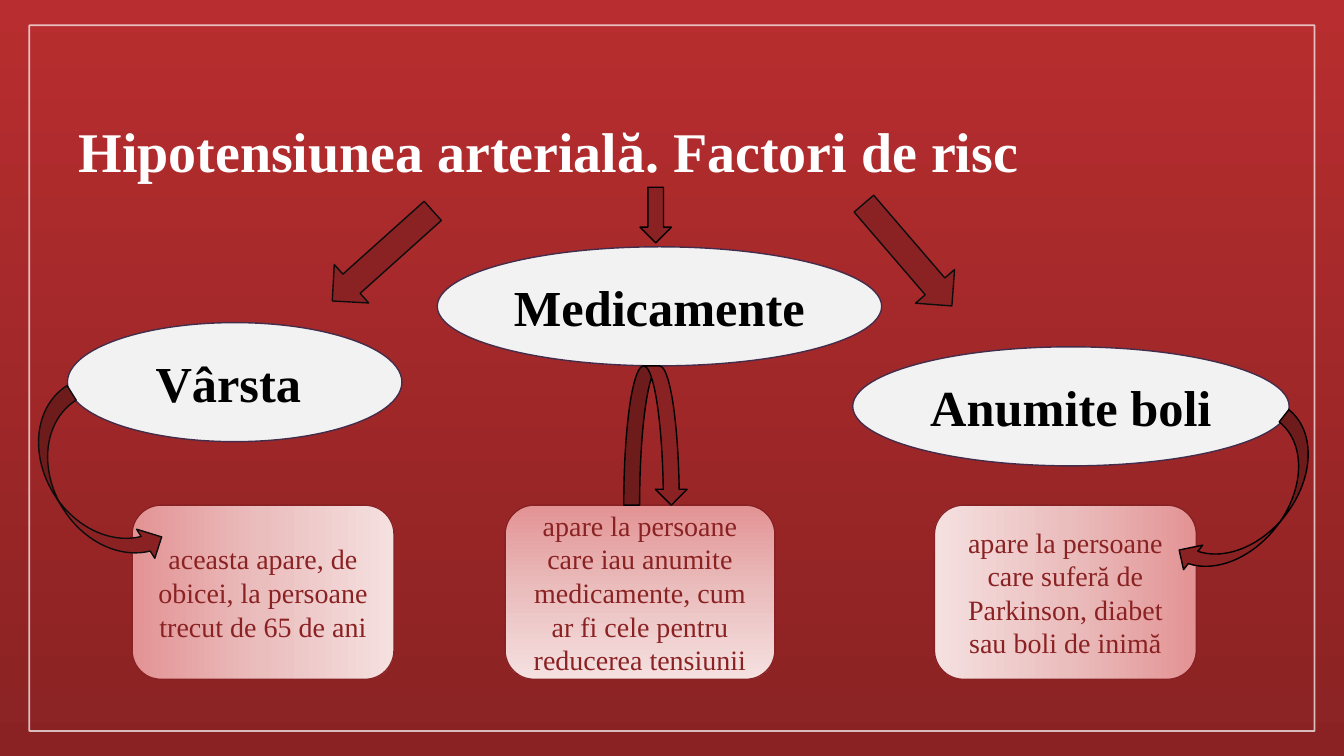
"""Build the slide on risk factors for low blood pressure."""
from copy import deepcopy
from typing import NamedTuple

from lxml.etree import SubElement
from pptx import Presentation
from pptx.dml.color import RGBColor
from pptx.dml.fill import FillFormat
from pptx.enum.shapes import MSO_SHAPE as Preset
from pptx.enum.text import MSO_ANCHOR as Anchor, PP_ALIGN as Align
from pptx.oxml.ns import qn
from pptx.shapes.autoshape import Shape
from pptx.slide import Slide
from pptx.util import Cm, Pt

FONT = "Times New Roman"
DARK_RED = "8A2223"
BLACK = "000000"
WHITE = "FFFFFF"


class Place(NamedTuple):
    left: float
    top: float
    width: float
    height: float


class Factor(NamedTuple):
    name: str
    oval: Place
    detail: str
    panel: Place
    angle: int


class Arrow(NamedTuple):
    preset: Preset
    place: Place
    rotation: float = 0
    line: str = BLACK


PANEL_TOP, PANEL_HEIGHT, OVAL_HEIGHT = 12.73, 4.39, 3

FACTORS = [
    Factor("Vârsta ", Place(1.7, 8.13, 8.43, OVAL_HEIGHT),
           "aceasta apare, de obicei, la persoane trecut de 65 de ani",
           Place(3.33, PANEL_TOP, 6.6, PANEL_HEIGHT), 0),
    Factor("Medicamente", Place(11.02, 6.22, 11.2, OVAL_HEIGHT),
           "apare la persoane care iau anumite medicamente, cum ar fi cele "
           "pentru reducerea tensiunii",
           Place(12.73, PANEL_TOP, 6.8, PANEL_HEIGHT), 90),
    Factor("Anumite boli", Place(21.49, 8.74, 11, OVAL_HEIGHT),
           "apare la persoane care suferă de Parkinson, diabet sau boli de inimă",
           Place(23.55, PANEL_TOP, 6.6, PANEL_HEIGHT), 180),
]

ARROWS = [
    Arrow(Preset.CURVED_LEFT_ARROW, Place(30.81, 10.29, 1.57, 4.88), 38),
    Arrow(Preset.CURVED_RIGHT_ARROW, Place(1.4, 9.8, 1.73, 4.93), 328, "0D0D0D"),
    Arrow(Preset.CURVED_DOWN_ARROW, Place(15.72, 9.22, 1.6, 3.51)),
    Arrow(Preset.DOWN_ARROW, Place(16.13, 4.72, 0.79, 1.4)),
    Arrow(Preset.DOWN_ARROW, Place(22.23, 4.72, 1.3, 3.4), 319.3, "0D0D0D"),
    Arrow(Preset.DOWN_ARROW, Place(8.99, 4.75, 1.3, 3.4), 48.1, "0D0D0D"),
]


def color(code: str) -> RGBColor:
    return RGBColor.from_string(code)


def set_gradient(fill: FillFormat, colors: list[str], clockwise: int) -> None:
    for index, (stop, code) in enumerate(zip(fill.gradient_stops, colors)):
        stop.color.rgb = color(code)
        stop.position = index / (len(colors) - 1)
    fill.gradient_angle = (360 - clockwise) % 360


def add_preset(page: Slide, preset: Preset, place: Place, line: str,
               fill: str | None = None, weight: float = 1) -> Shape:
    shape = page.shapes.add_shape(preset, *map(Cm, place))
    shape.shadow.inherit = False
    if fill:
        shape.fill.solid()
        shape.fill.fore_color.rgb = color(fill)
    else:
        shape.fill.background()
    shape.line.color.rgb = color(line)
    shape.line.width = Pt(weight)
    return shape


def write(box: Shape, text: str, *, size: float, ink: str, bold: bool = False,
          align: Align = Align.CENTER, anchor: Anchor = Anchor.MIDDLE) -> None:
    frame = box.text_frame
    frame.word_wrap = True
    frame.vertical_anchor = anchor
    para = frame.paragraphs[0]
    para.alignment = align
    span = para.add_run()
    span.text = text
    span.font.name = FONT
    span.font.size = Pt(size)
    span.font.bold = bold
    span.font.color.rgb = color(ink)


def add_frame(page: Slide) -> None:
    frame = add_preset(page, Preset.RECTANGLE, Place(0.74, 0.64, 32.39, 17.78),
                       WHITE, weight=1.25)
    line_color = next(frame.line._ln.iter(qn("a:srgbClr")))
    SubElement(line_color, qn("a:alpha"), val="70000")


def add_title(page: Slide) -> None:
    box = page.shapes.add_textbox(*map(Cm, Place(1.73, 1.73, 29.79, 3.4)))
    write(box, "Hipotensiunea arterială. Factori de risc", size=40, ink=WHITE,
          bold=True, align=Align.LEFT, anchor=Anchor.BOTTOM)
    box.text_frame.margin_bottom = Cm(0.51)
    box.text_frame.paragraphs[0].line_spacing = 0.8


def add_oval(page: Slide, factor: Factor) -> None:
    oval = add_preset(page, Preset.OVAL, factor.oval, "442C4B", "F2F2F2")
    write(oval, factor.name, size=36, ink=BLACK, bold=True)


def add_panel(page: Slide, factor: Factor) -> None:
    panel = add_preset(page, Preset.ROUNDED_RECTANGLE, factor.panel, "882123")
    panel.fill.gradient()
    stops = next(panel._element.spPr.iter(qn("a:gsLst")))
    stops.insert(1, deepcopy(stops[0]))
    set_gradient(panel.fill, ["E39394", "EBBEBE", "F5E0E0"], factor.angle)
    write(panel, factor.detail, size=20, ink=DARK_RED)


def main() -> None:
    deck = Presentation()
    deck.slide_width, deck.slide_height = Cm(33.87), Cm(19.05)
    page = deck.slides.add_slide(deck.slide_layouts[6])
    page.background.fill.gradient()
    set_gradient(page.background.fill, ["B82D2F", DARK_RED], 90)

    add_frame(page)
    add_title(page)
    for factor in FACTORS:
        add_oval(page, factor)
    for factor in FACTORS:
        add_panel(page, factor)
    for arrow in ARROWS:
        shape = add_preset(page, arrow.preset, arrow.place, arrow.line, DARK_RED)
        shape.rotation = arrow.rotation
    deck.save("out.pptx")


if __name__ == "__main__":
    main()
